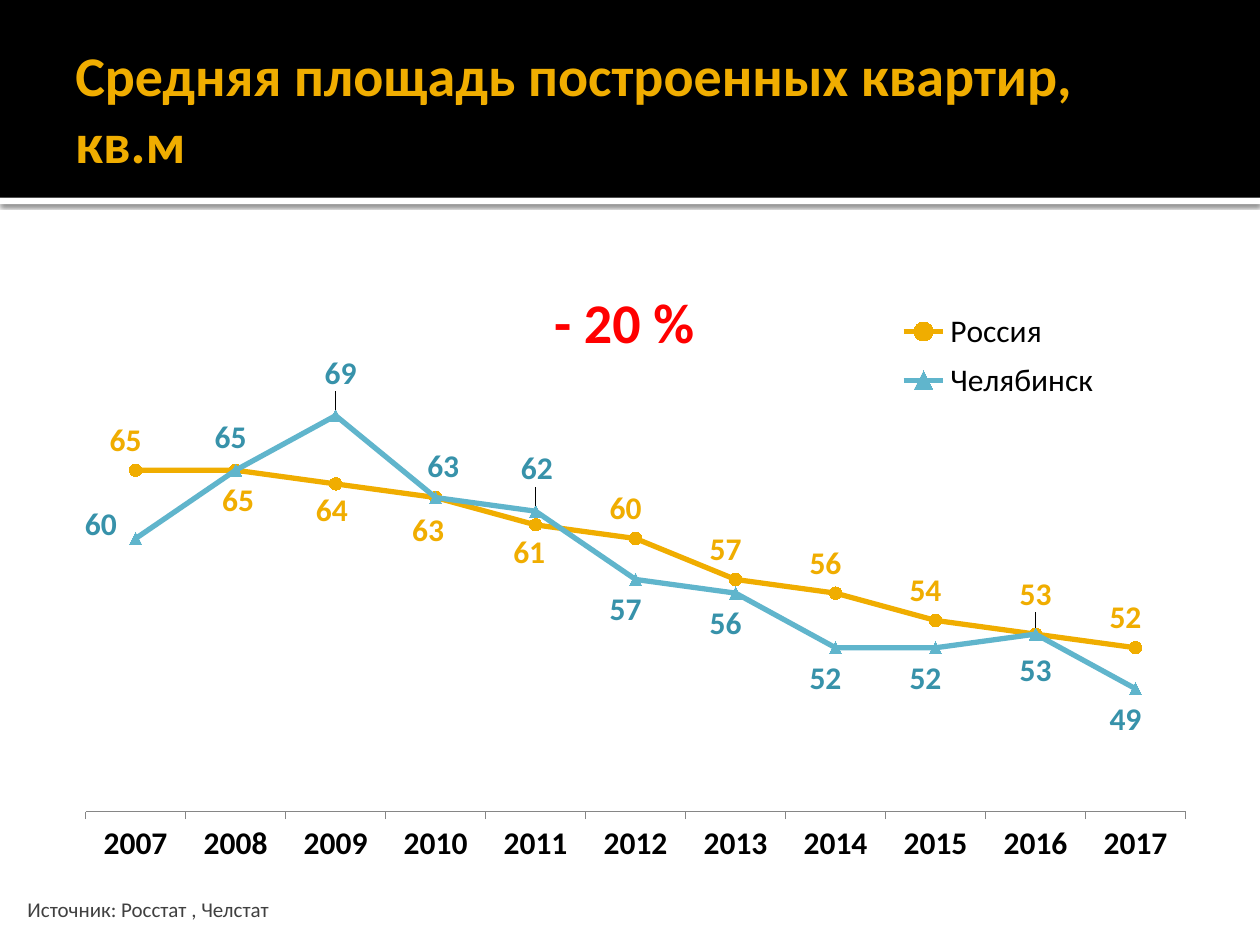
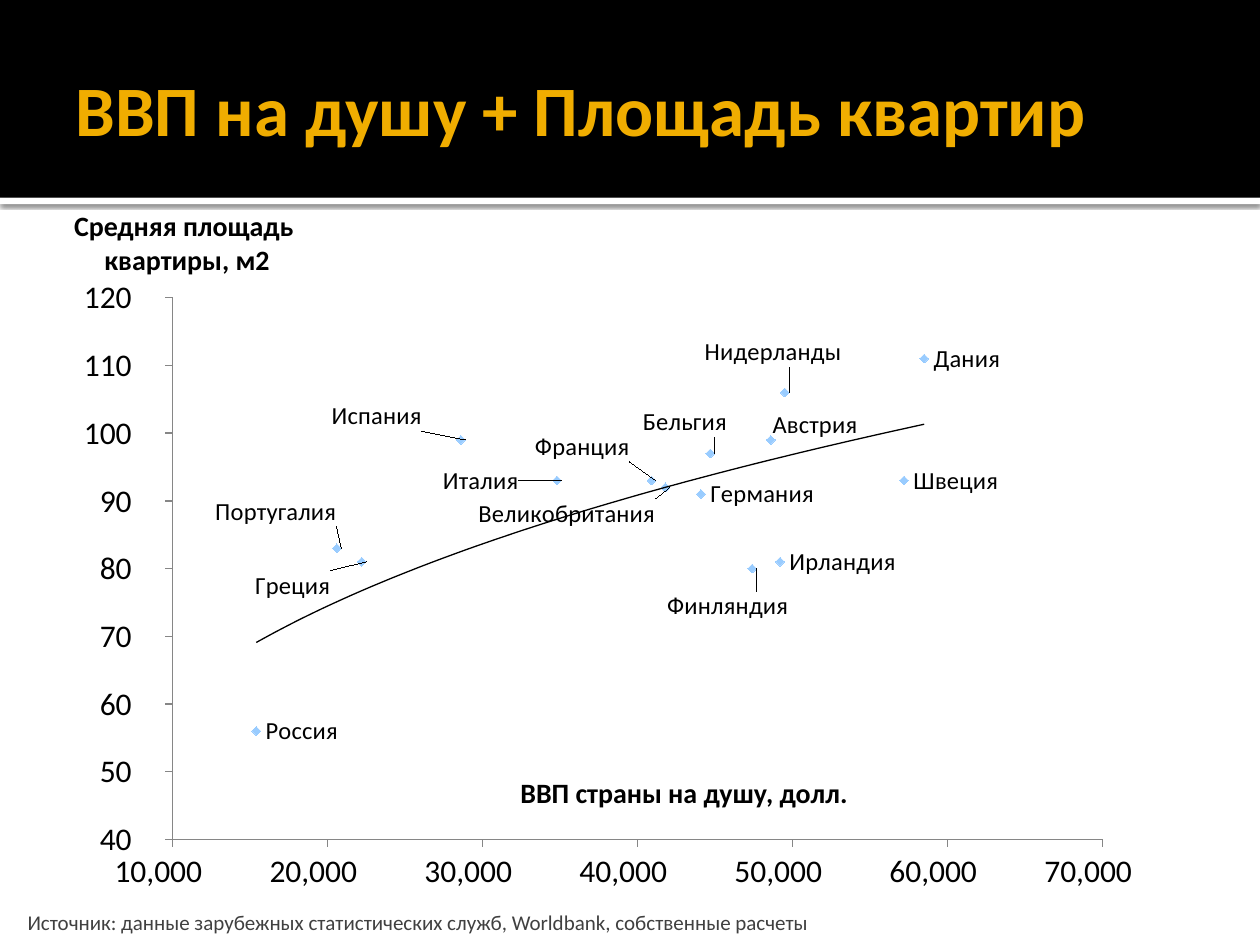
from lxml import etree
from pptx import Presentation
from pptx.chart.data import CategoryChartData, XyChartData
from pptx.dml.color import RGBColor
from pptx.enum.chart import (XL_CHART_TYPE, XL_LABEL_POSITION, XL_LEGEND_POSITION,
                             XL_MARKER_STYLE, XL_TICK_MARK)
from pptx.enum.shapes import MSO_SHAPE
from pptx.enum.text import MSO_ANCHOR, PP_ALIGN
from pptx.oxml import parse_xml
from pptx.oxml.ns import nsdecls, qn
from pptx.util import Pt

PX = 9144  # EMU per px, 100 px to the inch
ABOVE, BELOW = XL_LABEL_POSITION.ABOVE, XL_LABEL_POSITION.BELOW
LEFT, RIGHT = XL_LABEL_POSITION.LEFT, XL_LABEL_POSITION.RIGHT
CENTER, MIDDLE = PP_ALIGN.CENTER, MSO_ANCHOR.MIDDLE
CIRCLE, TRIANGLE = XL_MARKER_STYLE.CIRCLE, XL_MARKER_STYLE.TRIANGLE
DIAMOND = XL_MARKER_STYLE.DIAMOND
OUTSIDE = XL_TICK_MARK.OUTSIDE
RECTANGLE = MSO_SHAPE.RECTANGLE

FONT = "Calibri"
BLACK, WHITE, GOLD, BLUE = "000000", "FFFFFF", "F0AD00", "60B5CC"
DARK_BLUE, PALE_BLUE, RED = "3792AA", "99CCFF", "FF0000"
GRAY, AXIS_GRAY = "404040", "868686"
color = RGBColor.from_string
CHART_WIDTH, CHART_HEIGHT = 900, 506
PADDED_NUMBER = "#,##0_р_._-"


def add_text(slide, box, lines, size, hex_color, bold=True, wrap=True, align=None, anchor=None):
    shape = slide.shapes.add_textbox(*[value * PX for value in box])
    frame = shape.text_frame
    frame.word_wrap = wrap
    frame.vertical_anchor = anchor
    frame.text = "\n".join(lines)
    formats = {"name": FONT, "size": Pt(size), "bold": bold}
    for paragraph in frame.paragraphs:
        paragraph.alignment = align
        font = paragraph.runs[0].font
        for name, value in formats.items():
            setattr(font, name, value)
        font.color.rgb = color(hex_color)
    return frame


def set_layout(parent, index, values):
    """Place a chart part by hand; values are in schema order."""
    for layout in parent.findall(qn("c:layout")):
        parent.remove(layout)
    layout = etree.Element(qn("c:layout"))
    manual = etree.SubElement(layout, qn("c:manualLayout"))
    for name, value in values.items():
        etree.SubElement(manual, qn("c:" + name)).set("val", str(value))
    parent.insert(index, layout)


presentation = Presentation()
presentation.slide_width = 1000 * PX
presentation.slide_height = 750 * PX

# Shared frame: bands, title, source line
slide_texts = [
    ("Средняя площадь построенных квартир, кв.м", 32,
     "Источник: Росстат , Челстат", (12, 707, 630, 30)),
    ("ВВП на душу + Площадь квартир", 40.5,
     "Источник: данные зарубежных статистических служб, Worldbank, собственные расчеты",
     (12, 717, 748, 30)),
]
for title, title_size, source, source_box in slide_texts:
    slide = presentation.slides.add_slide(presentation.slide_layouts[6])
    for top, height, fill in [(157, 5, WHITE), (0, 157, BLACK)]:
        band = slide.shapes.add_shape(RECTANGLE, 0, top * PX, 1000 * PX, height * PX)
        band.shadow.inherit = False
        band.fill.solid()
        band.fill.fore_color.rgb = color(fill)
        band.line.fill.background()
        if fill == WHITE:
            effects = band._element.spPr.find(qn("a:effectLst"))
            effects.append(parse_xml(
                f'<a:outerShdw {nsdecls("a")} blurRad="31750" dist="10160" dir="5400000">'
                f'<a:srgbClr val="{BLACK}"><a:alpha val="60000"/></a:srgbClr></a:outerShdw>'))
    title_frame = add_text(slide, (50, 17, 900, 137), [title], title_size, GOLD, anchor=MIDDLE)
    title_frame.margin_right = 5 * PX
    add_text(slide, source_box, [source], 12, GRAY, bold=False)
area_slide, gdp_slide = presentation.slides

# Chart data: flat area by year, and flat area against GDP
area_data = CategoryChartData()
area_data.categories = [str(year) for year in range(2007, 2018)]
area_data.add_series("Россия", [65, 65, 64, 63, 61, 60, 57, 56, 54, 53, 52])
area_data.add_series("Челябинск", [60, 65, 69, 63, 62, 57, 56, 52, 52, 53, 49])

# Country, GDP per head, flat area, label shift
countries = [
    ("Дания", 58500, 111, 0, 0),
    ("Швеция", 57200, 93, 0, 0),
    ("Нидерланды", 49500, 106, -71, -32),
    ("Ирландия", 49200, 81, 0, 0),
    ("Австрия", 48600, 99, -6, -12),
    ("Финляндия", 47400, 80, -75, 30),
    ("Бельгия", 44700, 97, -61, -25),
    ("Германия", 44100, 91, 0, 0),
    ("Великобритания", 41800, 92, -156, 21),
    ("Франция", 40900, 93, -100, -27),
    ("Италия", 34800, 93, -98, 0),
    ("Испания", 28600, 99, -110, -19),
    ("Греция", 22200, 81, -92, 19),
    ("Португалия", 20600, 83, -104, -29),
    ("Россия", 15400, 56, 0, 0),
]
gdp_data = XyChartData()
gdp_series_data = gdp_data.add_series("Series 1")
for country, gdp, area, shift_x, shift_y in countries:
    gdp_series_data.add_data_point(gdp, area)

# Both charts and their axes
charts = []
for slide, kind, data, left, top, plot in [
    (area_slide, XL_CHART_TYPE.LINE_MARKERS, area_data, 50, 194, (0.02, 0.14, 0.97, 0.75)),
    (gdp_slide, XL_CHART_TYPE.XY_SCATTER, gdp_data, 47, 211, (0.1, 0.05, 0.82, 0.85)),
]:
    chart = slide.shapes.add_chart(kind, left * PX, top * PX, CHART_WIDTH * PX,
                                   CHART_HEIGHT * PX, data).chart
    chart.has_title = False
    chart.has_legend = False
    chart.font.name = FONT
    chart.font.size = Pt(18)
    chart.font.color.rgb = color(BLACK)
    chart.plots[0].vary_by_categories = False
    for axis in (chart.category_axis, chart.value_axis):
        axis.has_major_gridlines = False
        axis.major_tick_mark = OUTSIDE
        axis.format.line.color.rgb = color(AXIS_GRAY)
        axis.format.line.width = Pt(0.75)
    x, y, width, height = plot
    set_layout(chart._chartSpace.chart.plotArea, 0, {
        "layoutTarget": "inner", "xMode": "edge", "yMode": "edge",
        "x": x, "y": y, "w": width, "h": height})
    charts.append(chart)
area_chart, gdp_chart = charts

# Line chart: axes and legend
area_chart.category_axis.tick_labels.font.bold = True
area_chart.value_axis.minimum_scale = 40
area_chart.value_axis.maximum_scale = 75
area_chart.value_axis.visible = False
area_chart.has_legend = True
legend = area_chart.legend
legend.position = XL_LEGEND_POSITION.TOP
legend.include_in_layout = False
legend.font.size = Pt(18)
set_layout(legend._element, 1, {"xMode": "edge", "yMode": "edge",
                                "x": 0.73, "y": 0.09, "w": 0.19, "h": 0.17})

# Line chart: series, and labels moved off the crossing lines
line_styles = [
    (GOLD, GOLD, CIRCLE, ABOVE,
     {1: (BELOW, 2, 0), 2: (BELOW, -3, -3), 3: (BELOW, -6, 2), 4: (BELOW, -5, -2),
      9: (ABOVE, 0, -8)}),
    (BLUE, DARK_BLUE, TRIANGLE, BELOW,
     {0: (LEFT, -6, -11), 1: (ABOVE, -4, -2), 2: (ABOVE, 4, -10), 3: (ABOVE, 6, -1),
      4: (ABOVE, 1, -10), 9: (BELOW, 0, 5)}),
]
for series, style in zip(area_chart.plots[0].series, line_styles):
    line_color, label_color, marker, side, moved = style
    series.smooth = False
    series.format.line.color.rgb = color(line_color)
    series.format.line.width = Pt(3)
    series.marker.style = marker
    series.marker.size = 7
    series.marker.format.fill.solid()
    series.marker.format.fill.fore_color.rgb = color(line_color)
    series.marker.format.line.color.rgb = color(line_color)
    for index in range(len(series.values)):
        position, shift_x, shift_y = moved.get(index, (side, -8, 0))
        label = series.points[index].data_label
        label.font.size = Pt(18)
        label.font.bold = True
        label.font.color.rgb = color(label_color)
        label.position = position
        set_layout(label._get_or_add_dLbl(), 1, {
            "x": round(shift_x / CHART_WIDTH, 4), "y": round(shift_y / CHART_HEIGHT, 4)})

# Scatter chart: scales
for axis, low, high, step in [(gdp_chart.category_axis, 10000, 70000, 10000),
                              (gdp_chart.value_axis, 40, 120, 10)]:
    scale = {"minimum_scale": low, "maximum_scale": high, "major_unit": step}
    for name, value in scale.items():
        setattr(axis, name, value)
    axis.tick_labels.number_format = PADDED_NUMBER
    axis.tick_labels.number_format_is_linked = False

# Scatter chart: points named by country
series = gdp_chart.plots[0].series[0]
series.format.line.fill.background()
series.marker.style = DIAMOND
series.marker.size = 5
series.marker.format.fill.solid()
series.marker.format.fill.fore_color.rgb = color(PALE_BLUE)
series.marker.format.line.color.rgb = color(PALE_BLUE)
for index, (country, gdp, area, shift_x, shift_y) in enumerate(countries):
    label = series.points[index].data_label
    label.text_frame.text = country
    font = label.text_frame.paragraphs[0].runs[0].font
    font.name = FONT
    font.size = Pt(14)
    font.color.rgb = color(BLACK)
    label.position = RIGHT
    if shift_x or shift_y:
        set_layout(label._get_or_add_dLbl(), 1, {
            "x": round(shift_x / CHART_WIDTH, 4), "y": round(shift_y / CHART_HEIGHT, 4)})

# Scatter chart: power trend line
series._element.find(qn("c:xVal")).addprevious(parse_xml(
    f'<c:trendline {nsdecls("c", "a")}><c:spPr><a:ln w="9525"><a:solidFill>'
    f'<a:srgbClr val="{BLACK}"/></a:solidFill></a:ln></c:spPr>'
    '<c:trendlineType val="power"/><c:dispRSqr val="0"/><c:dispEq val="0"/></c:trendline>'))

# Captions over the charts
add_text(area_slide, (430, 223, 136, 64), ["- 20 %"], 32, RED, wrap=False)
add_text(gdp_slide, (47, 161, 203, 64), ["Средняя площадь ", "квартиры, м2"], 16, BLACK,
         wrap=False, align=CENTER)
add_text(gdp_slide, (398, 611, 290, 37), ["ВВП страны на душу, долл."], 16, BLACK,
         wrap=False, align=CENTER)

presentation.save("out.pptx")
